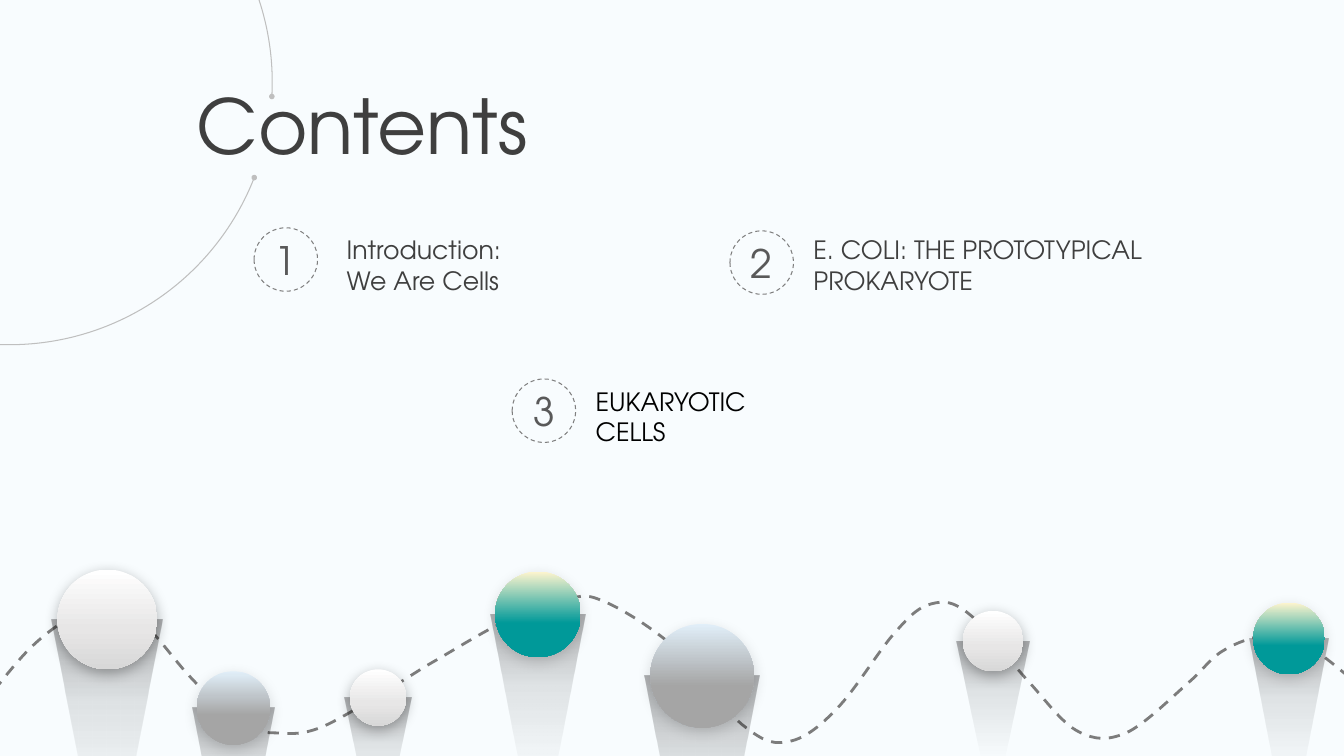
from lxml import etree
from pptx import Presentation
from pptx.dml.color import RGBColor
from pptx.enum.dml import MSO_LINE
from pptx.enum.shapes import MSO_SHAPE
from pptx.enum.text import MSO_ANCHOR, MSO_AUTO_SIZE, PP_ALIGN
from pptx.oxml.ns import qn
from pptx.util import Inches, Pt

ARC, OVAL = MSO_SHAPE.ARC, MSO_SHAPE.OVAL
DASH = MSO_LINE.DASH
TOP, MIDDLE = MSO_ANCHOR.TOP, MSO_ANCHOR.MIDDLE
LEFT, CENTER = PP_ALIGN.LEFT, PP_ALIGN.CENTER

FONT = "TeX Gyre Adventor"
COLORS = {
    "background": "F8FCFE", "heading": "3F3F3F", "number": "595959",
    "ink": "000000", "arc": "BFBFBF", "ring": "7F7F7F", "wave": "7C7C7C",
}
TITLE = "Contents"

# number, ring left and top, label, label left, top and width, label colour
CHAPTERS = [
    ("1", 2.52, 2.26, "Introduction: We Are Cells", 3.34, 2.28, 2.03, "heading"),
    ("2", 7.24, 2.29, "E. COLI: THE PROTOTYPICAL PROKARYOTE", 7.97, 2.28, 3.8, "heading"),
    ("3", 5.08, 3.76, "EUKARYOTIC CELLS", 5.81, 3.78, 2.23, "ink"),
]
RING = 0.63

# gradient stops (position %, colour, opacity %) and shadow opacity %
BALL_STYLES = {
    "white": ([(0, "FFFFFF", 100), (60, "E7E6E6", 100), (100, "D8D8D8", 100)], 30),
    "grey": ([(0, "E1EFF9", 100), (60, "A5A5A5", 100), (100, "A5A5A5", 100)], 15),
    "teal": ([(0, "FFF5CE", 100), (60, "009999", 100), (100, "009999", 100)], 15),
}
BEAM_STOPS = [(0, "000000", 30), (30, "000000", 10), (50, "000000", 5),
              (70, "000000", 0), (100, "000000", 0)]
# style, left, top, diameter, beam width
BALLS = [
    ("white", 0.57, 5.65, 0.99, 1.1),
    ("grey", 1.95, 6.66, 0.73, 0.81),
    ("white", 3.47, 6.64, 0.56, 0.66),
    ("teal", 4.91, 5.67, 0.85, 0.94),
    ("grey", 6.45, 6.19, 1.03, 1.14),
    ("white", 9.55, 6.06, 0.6, 0.72),
    ("teal", 12.43, 5.98, 0.71, 0.78),
]
BEAM_LENGTH = 2.73  # in ball diameters
# Right corner to tip to left corner, as shares of beam width and length
BEAM_START = (0.5, 0)
BEAM = [
    ((0.34, 0.33), (0.04, 1), (0, 0.98)),
    ((-0.04, 1), (-0.34, 0.33), (-0.5, 0)),
]

WAVE_START = (-0.06, 6.85)
# Bézier pieces: two control points and an end point each
WAVE = [
    ((0.06, 6.7), (0.18, 6.55), (0.29, 6.44)),
    ((0.41, 6.32), (0.53, 6.23), (0.64, 6.16)),
    ((0.74, 6.09), (0.81, 6.04), (0.92, 6.02)),
    ((1.02, 6.01), (1.15, 6.02), (1.25, 6.06)),
    ((1.35, 6.1), (1.38, 6.14), (1.49, 6.25)),
    ((1.6, 6.36), (1.78, 6.61), (1.91, 6.74)),
    ((2.03, 6.87), (2.15, 6.98), (2.24, 7.05)),
    ((2.33, 7.13), (2.38, 7.16), (2.46, 7.2)),
    ((2.54, 7.23), (2.58, 7.27), (2.71, 7.27)),
    ((2.84, 7.27), (2.97, 7.31), (3.22, 7.2)),
    ((3.47, 7.09), (4.22, 6.61), (4.22, 6.61)),
    ((4.52, 6.44), (4.78, 6.27), (5, 6.17)),
    ((5.22, 6.06), (5.38, 6.02), (5.54, 5.98)),
    ((5.7, 5.94), (5.76, 5.87), (5.95, 5.95)),
    ((6.14, 6.02), (6.46, 6.22), (6.7, 6.43)),
    ((6.93, 6.63), (7.17, 7.02), (7.35, 7.18)),
    ((7.54, 7.33), (7.64, 7.39), (7.8, 7.36)),
    ((7.96, 7.34), (8.12, 7.22), (8.3, 7.03)),
    ((8.48, 6.85), (8.73, 6.43), (8.89, 6.26)),
    ((9.04, 6.09), (9.12, 6.02), (9.24, 5.99)),
    ((9.36, 5.96), (9.45, 5.96), (9.61, 6.09)),
    ((9.78, 6.22), (10.03, 6.58), (10.21, 6.77)),
    ((10.39, 6.97), (10.54, 7.18), (10.7, 7.26)),
    ((10.86, 7.34), (10.98, 7.35), (11.17, 7.27)),
    ((11.35, 7.19), (11.63, 6.91), (11.79, 6.77)),
    ((11.95, 6.63), (12, 6.53), (12.14, 6.45)),
    ((12.27, 6.37), (12.45, 6.31), (12.58, 6.3)),
    ((12.72, 6.29), (12.81, 6.32), (12.95, 6.4)),
    ((13.09, 6.47), (13.25, 6.61), (13.42, 6.75)),
]


def rgb(name):
    return RGBColor.from_string(COLORS[name])


def place(shape, left, top, width, height):
    shape.left, shape.top = Inches(left), Inches(top)
    shape.width, shape.height = Inches(width), Inches(height)


def outline(shape, color, points, dash=None):
    """Leave the shape unfilled and flat, with only a line around it."""
    shape.shadow.inherit = False
    shape.fill.background()
    shape.line.color.rgb = rgb(color)
    shape.line.width = Pt(points)
    if dash:
        shape.line.dash_style = dash


def add_color(parent, color, opacity):
    node = etree.SubElement(parent, qn("a:srgbClr"), val=color)
    etree.SubElement(node, qn("a:alpha"), val=str(opacity * 1000))


def fill_downward(shape, stops):
    """Fill a borderless shape with a top-to-bottom gradient."""
    shape.shadow.inherit = False
    shape.line.fill.background()
    shape.fill.gradient()
    shape.fill.gradient_angle = 270
    stop_list = shape.element.spPr.find(".//" + qn("a:gsLst"))
    for old_stop in list(stop_list):
        stop_list.remove(old_stop)
    for position, color, opacity in stops:
        stop = etree.SubElement(stop_list, qn("a:gs"), pos=str(position * 1000))
        add_color(stop, color, opacity)


def drop_shadow(shape, opacity):
    effects = shape.element.spPr.find(qn("a:effectLst"))
    shadow = etree.SubElement(effects, qn("a:outerShdw"), blurRad=str(Pt(10)),
                              dist=str(Pt(3)), dir="5400000", rotWithShape="0")
    add_color(shadow, "000000", opacity)


def write(shape, text, size, color, align=LEFT, anchor=TOP):
    frame = shape.text_frame
    frame.auto_size = MSO_AUTO_SIZE.NONE
    frame.word_wrap = True
    frame.vertical_anchor = anchor
    para = frame.paragraphs[0]
    para.alignment = align
    span = para.add_run()
    span.text = text
    span.font.name, span.font.size = FONT, Pt(size)
    span.font.color.rgb = rgb(color)


def add_curve(page, start, pieces, close):
    """Draw straight segments through all points, then merge each three into a curve."""
    points = [(Inches(x), Inches(y)) for piece in pieces for x, y in piece]
    builder = page.shapes.build_freeform(Inches(start[0]), Inches(start[1]))
    builder.add_line_segments(points, close=close)
    shape = builder.convert_to_shape()
    segments = shape.element.spPr.findall(".//" + qn("a:lnTo"))[:len(points)]
    for index in range(0, len(segments), 3):
        curve = etree.Element(qn("a:cubicBezTo"))
        segments[index].addprevious(curve)
        for segment in segments[index:index + 3]:
            curve.append(segment[0])
            segment.getparent().remove(segment)
    return shape


def add_ball(page, style, left, top, size, beam_width):
    def on_beam(point):
        return (left + size / 2 + point[0] * beam_width,
                top + size / 2 + point[1] * BEAM_LENGTH * size)

    pieces = [[on_beam(point) for point in piece] for piece in BEAM]
    fill_downward(add_curve(page, on_beam(BEAM_START), pieces, True), BEAM_STOPS)
    ball = page.shapes.add_shape(OVAL, *map(Inches, (left, top, size, size)))
    stops, shadow_opacity = BALL_STYLES[style]
    fill_downward(ball, stops)
    drop_shadow(ball, shadow_opacity)


def add_chapter(page, number, ring_left, ring_top, label, left, top, width, color):
    ring = page.shapes.add_shape(OVAL, *map(Inches, (ring_left, ring_top, RING, RING)))
    outline(ring, "ring", 0.75, DASH)
    write(ring, number, 28, "number", CENTER, MIDDLE)
    box = page.shapes.add_textbox(*map(Inches, (left, top, width, 0.64)))
    write(box, label, 18, color)


def main():
    deck = Presentation()
    deck.slide_width, deck.slide_height = Inches(13.33), Inches(7.5)
    page = deck.slides.add_slide(deck.slide_layouts[5])
    page.background.fill.solid()
    page.background.fill.fore_color.rgb = rgb("background")

    title = page.shapes.title
    place(title, 1.85, 0.73, 3.96, 1.01)
    write(title, TITLE, 54, "heading")

    arc = page.shapes.add_shape(ARC, *map(Inches, (-2.51, -1.79, 5.21, 5.21)))
    arc.adjustments[0], arc.adjustments[1] = 12.794, 1.883
    outline(arc, "arc", 0.75)
    arc_line = arc.element.spPr.find(qn("a:ln"))
    for end in ("a:headEnd", "a:tailEnd"):
        etree.SubElement(arc_line, qn(end), type="oval", w="sm", len="sm")

    outline(add_curve(page, WAVE_START, WAVE, False), "wave", 2, DASH)
    for ball in BALLS:
        add_ball(page, *ball)
    for chapter in CHAPTERS:
        add_chapter(page, *chapter)
    deck.save("out.pptx")


if __name__ == "__main__":
    main()
